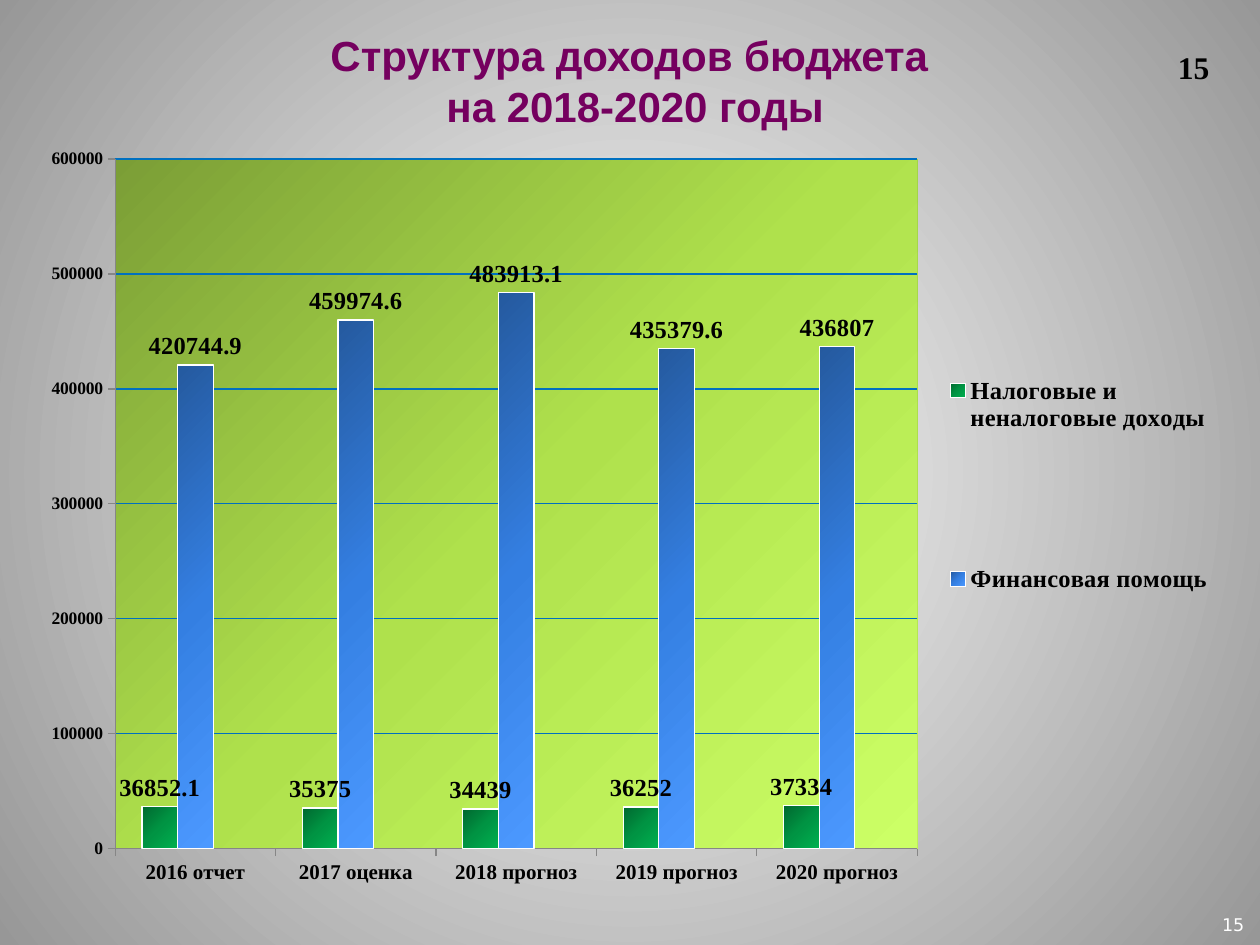
from dataclasses import dataclass

import pptx
import pptx.chart.data
import pptx.dml.color
import pptx.enum.chart
import pptx.enum.text
import pptx.oxml
import pptx.oxml.ns
import pptx.util

RGBColor = pptx.dml.color.RGBColor
Pt = pptx.util.Pt
qn = pptx.oxml.ns.qn

WIDTH, HEIGHT = pptx.util.Inches(10), pptx.util.Inches(7.5)

WHITE = RGBColor(0xFF, 0xFF, 0xFF)
BLACK = RGBColor(0x00, 0x00, 0x00)
GREY = RGBColor(0x97, 0x97, 0x97)
AXIS_GREY = RGBColor(0x86, 0x86, 0x86)
PLUM = RGBColor(0x75, 0x00, 0x5F)
PURPLE = RGBColor(0x9C, 0x00, 0x7F)
GRID_BLUE = RGBColor(0x00, 0x70, 0xC0)
LIMES = (RGBColor(0x7B, 0x9E, 0x36), RGBColor(0xAF, 0xE1, 0x4C), RGBColor(0xCC, 0xFF, 0x66))
GREENS = (RGBColor(0x00, 0x68, 0x2F), RGBColor(0x00, 0x94, 0x43), RGBColor(0x00, 0xB0, 0x50))
BLUES = (RGBColor(0x25, 0x5A, 0x9F), RGBColor(0x34, 0x7F, 0xE2), RGBColor(0x4C, 0x99, 0xFF))

DIAGONAL = '<a:lin ang="2700000" scaled="1"/>'
RADIAL = '<a:path path="circle"><a:fillToRect l="50000" t="50000" r="50000" b="50000"/></a:path>'
YEARS = ("2016 отчет", "2017 оценка", "2018 прогноз", "2019 прогноз", "2020 прогноз")


@dataclass(frozen=True)
class Area:
    """A rectangle in shares of its container."""
    left: float
    top: float
    width: float
    height: float

    def on_slide(self) -> tuple[int, int, int, int]:
        return (int(self.left * WIDTH), int(self.top * HEIGHT),
                int(self.width * WIDTH), int(self.height * HEIGHT))


@dataclass(frozen=True)
class Income:
    name: str
    values: tuple
    colors: tuple


@dataclass(frozen=True)
class PageNumber:
    area: Area
    size: int
    font: str
    color: RGBColor
    bold: bool
    margin: float


INCOMES = (
    Income("Налоговые и неналоговые доходы", (36852.1, 35375, 34439, 36252, 37334), GREENS),
    Income("Финансовая помощь", (420744.9, 459974.6, 483913.1, 435379.6, 436807), BLUES),
    Income("Series 3", (None,) * len(YEARS), (PURPLE,)),
)
PAGE_NUMBERS = (
    PageNumber(Area(0.97, 0.967, 0.023, 0.023), 10, "DejaVu Sans", WHITE, False, 0),
    PageNumber(Area(0.925, 0.044, 0.05, 0.053), 18, "Times New Roman", BLACK, True, 0.1),
)


def set_font(font, size: int, color: RGBColor, bold: bool, name: str = "Times New Roman") -> None:
    font.size, font.bold, font.name = Pt(size), bold, name
    font.color.rgb = color


def gradient(colors: tuple, direction: str):
    """Make a gradient fill element with evenly spaced stops."""
    stops = "".join(
        f'<a:gs pos="{100000 * index // (len(colors) - 1)}"><a:srgbClr val="{color}"/></a:gs>'
        for index, color in enumerate(colors))
    return pptx.oxml.parse_xml(
        f'<a:gradFill {pptx.oxml.ns.nsdecls("a")} rotWithShape="1">'
        f'<a:gsLst>{stops}</a:gsLst>{direction}</a:gradFill>')


def replace_solid_fill(properties, colors: tuple, direction: str) -> None:
    properties.replace(properties.find(qn("a:solidFill")), gradient(colors, direction))


def place(parent, area: Area, inner: bool = False) -> None:
    """Give a plot area or a legend a fixed place in the chart."""
    old = parent.find(qn("c:layout"))
    if old is not None:
        parent.remove(old)
    target = '<c:layoutTarget val="inner"/>' if inner else ""
    layout = pptx.oxml.parse_xml(
        f'<c:layout {pptx.oxml.ns.nsdecls("c")}><c:manualLayout>{target}'
        f'<c:xMode val="edge"/><c:yMode val="edge"/><c:x val="{area.left}"/>'
        f'<c:y val="{area.top}"/><c:w val="{area.width}"/><c:h val="{area.height}"/>'
        f'</c:manualLayout></c:layout>')
    if inner:
        parent.insert(0, layout)
    else:
        parent.find(qn("c:overlay")).addprevious(layout)


def add_title(slide) -> None:
    title = slide.shapes.title
    title.left, title.top, title.width, title.height = Area(0.096, 0.031, 0.807, 0.108).on_slide()
    frame = title.text_frame
    frame.margin_left = frame.margin_right = frame.margin_top = frame.margin_bottom = 0
    frame.vertical_anchor = pptx.enum.text.MSO_ANCHOR.MIDDLE
    frame.text = "Структура доходов бюджета\v на 2018-2020 годы"
    paragraph = frame.paragraphs[0]
    paragraph.alignment = pptx.enum.text.PP_ALIGN.CENTER
    set_font(paragraph.font, 24, PLUM, True, "Arial")


def add_page_number(slide, number: PageNumber) -> None:
    frame = slide.shapes.add_textbox(*number.area.on_slide()).text_frame
    frame.word_wrap = True
    frame.margin_left = frame.margin_right = pptx.util.Inches(number.margin)
    frame.margin_top = frame.margin_bottom = pptx.util.Inches(number.margin / 2)
    paragraph = frame.paragraphs[0]
    paragraph.text = "15"
    set_font(paragraph.font, number.size, number.color, number.bold, number.font)


def format_series(series, colors: tuple) -> None:
    series.format.fill.solid()
    series.format.fill.fore_color.rgb = colors[0]
    if len(colors) == 1:
        return
    replace_solid_fill(series.format.fill._xPr, colors, DIAGONAL)
    series.format.line.color.rgb = WHITE
    series.format.line.width = Pt(0.75)
    labels = series.data_labels
    labels.show_value = True
    labels.position = pptx.enum.chart.XL_LABEL_POSITION.OUTSIDE_END
    set_font(labels.font, 14, BLACK, True)


def format_legend(chart) -> None:
    chart.has_legend = True
    legend = chart.legend
    legend.position = pptx.enum.chart.XL_LEGEND_POSITION.RIGHT
    legend.include_in_layout = False
    set_font(legend.font, 14, BLACK, True)
    place(legend._element, Area(0.755, 0.14, 0.24, 0.63))
    hidden_entry = pptx.oxml.parse_xml(
        f'<c:legendEntry {pptx.oxml.ns.nsdecls("c")}><c:idx val="2"/><c:delete val="1"/></c:legendEntry>')
    legend._element.find(qn("c:legendPos")).addnext(hidden_entry)


def add_income_chart(slide) -> None:
    data = pptx.chart.data.CategoryChartData(number_format="General")
    data.categories = YEARS
    for income in INCOMES:
        data.add_series(income.name, income.values)
    chart = slide.shapes.add_chart(
        pptx.enum.chart.XL_CHART_TYPE.COLUMN_CLUSTERED,
        *Area(0.025, 0.144, 0.95, 0.811).on_slide(), data).chart
    chart.has_title = False
    set_font(chart.font, 10, BLACK, False)

    plot = chart.plots[0]
    plot.gap_width, plot.overlap, plot.vary_by_categories = 150, 0, False
    for series, income in zip(plot.series, INCOMES):
        format_series(series, income.colors)

    for axis, size in ((chart.category_axis, 12), (chart.value_axis, 10)):
        axis.major_tick_mark = pptx.enum.chart.XL_TICK_MARK.OUTSIDE
        axis.format.line.color.rgb = AXIS_GREY
        set_font(axis.tick_labels.font, size, BLACK, True)
    value_axis = chart.value_axis
    value_axis.minimum_scale, value_axis.maximum_scale, value_axis.major_unit = 0, 600000, 100000
    value_axis.major_gridlines.format.line.color.rgb = GRID_BLUE
    value_axis.major_gridlines.format.line.width = Pt(0.75)

    plot_area = chart._chartSpace.chart.plotArea
    place(plot_area, Area(0.07, 0.03, 0.67, 0.9), inner=True)
    properties = pptx.oxml.parse_xml(f'<c:spPr {pptx.oxml.ns.nsdecls("c", "a")}/>')
    properties.append(gradient(LIMES, DIAGONAL))
    plot_area.append(properties)
    format_legend(chart)


def main() -> None:
    presentation = pptx.Presentation()
    presentation.slide_width, presentation.slide_height = WIDTH, HEIGHT
    slide = presentation.slides.add_slide(presentation.slide_layouts[5])
    slide.background.fill.solid()
    replace_solid_fill(slide.background.fill._xPr, (WHITE, GREY), RADIAL)
    add_title(slide)
    for number in PAGE_NUMBERS:
        add_page_number(slide, number)
    add_income_chart(slide)
    presentation.save("out.pptx")


if __name__ == "__main__":
    main()
